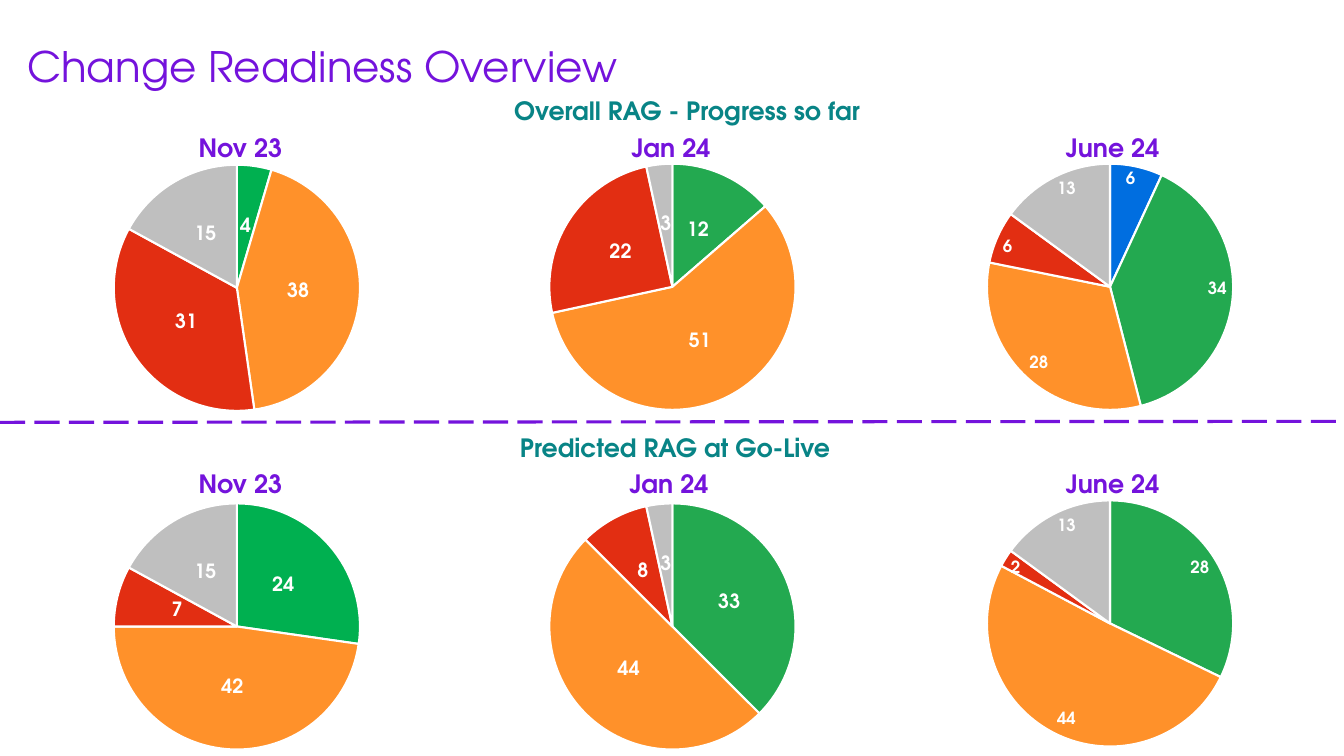
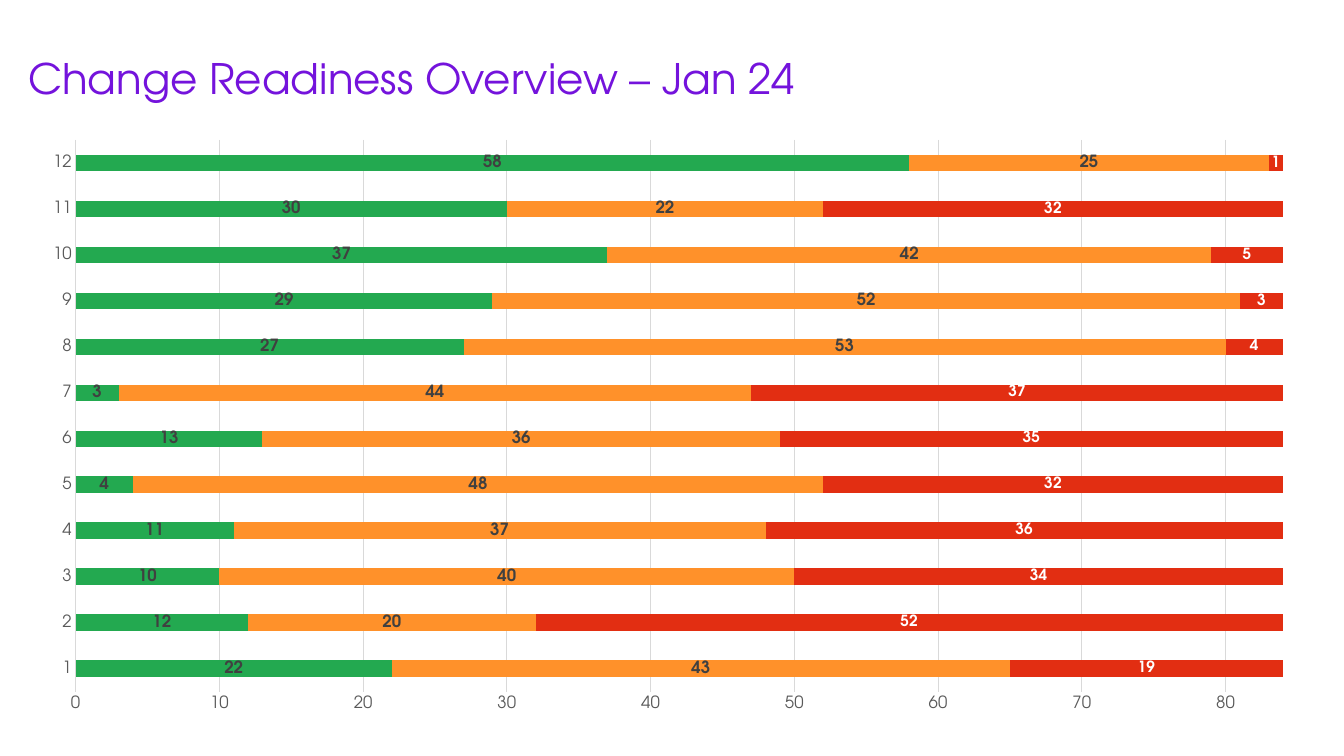
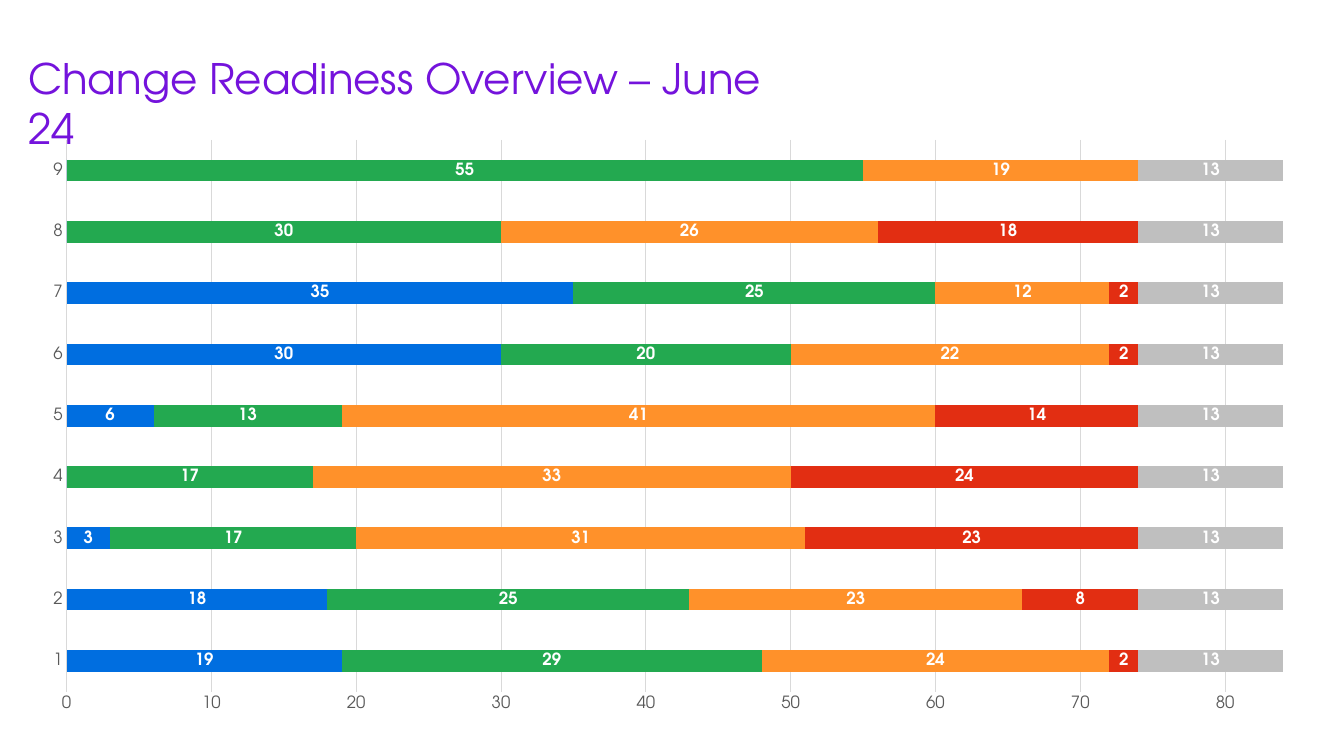
from lxml import etree
from pptx import Presentation
from pptx.chart.data import CategoryChartData as ChartData
from pptx.dml.color import RGBColor
from pptx.enum.chart import XL_CHART_TYPE as Kind
from pptx.enum.chart import XL_LABEL_POSITION as Pos
from pptx.enum.chart import XL_TICK_MARK as Tick
from pptx.enum.dml import MSO_LINE as Dash
from pptx.enum.shapes import MSO_CONNECTOR as Link
from pptx.enum.text import PP_ALIGN as Align
from pptx.oxml.ns import qn
from pptx.util import Inches, Pt

FONT = "TeX Gyre Adventor"
PURPLE = RGBColor(0x74, 0x13, 0xDC)
TEAL = RGBColor(0x08, 0x84, 0x86)
BLUE = RGBColor(0x00, 0x6E, 0xE0)
GREEN = RGBColor(0x23, 0xA9, 0x50)
BRIGHT = RGBColor(0x00, 0xB0, 0x50)
AMBER = RGBColor(0xFF, 0x91, 0x2A)
RED = RGBColor(0xE2, 0x2E, 0x12)
GREY = RGBColor(0xBF, 0xBF, 0xBF)
RULE = RGBColor(0xD9, 0xD9, 0xD9)
DIM = RGBColor(0x59, 0x59, 0x59)
DARK = RGBColor(0x40, 0x40, 0x40)
WHITE = RGBColor(0xFF, 0xFF, 0xFF)
BLACK = RGBColor(0, 0, 0)

RAG = [AMBER, RED, GREY]
NOV, JAN, JUNE = [BRIGHT] + RAG, [GREEN] + RAG, [BLUE, GREEN] + RAG

# Each pie: label, label centre, left, top, values, colours, label place, size
PIES = [
    ("Nov 23", 2.35, 0.38, 1.49, [4, 38, 31, 15], NOV, Pos.CENTER, 14),
    ("Jan 24", 6.62, 4.7, 1.48, [12, 51, 22, 3], JAN, Pos.CENTER, 14),
    ("June 24", 11, 9.04, 1.48, [6, 34, 28, 6, 13], JUNE, Pos.INSIDE_END, 12),
    ("Nov 23", 2.35, 0.38, 4.85, [24, 42, 7, 15], NOV, Pos.CENTER, 14),
    ("Jan 24", 6.6, 4.7, 4.85, [33, 44, 8, 3], JAN, Pos.CENTER, 14),
    ("June 24", 11, 9.04, 4.82, [0, 28, 44, 2, 13], [GREEN] + JAN,
     Pos.INSIDE_END, 12),
]

# Each bar series: values, fill, label colour, label size
JAN_BARS = [
    ([22, 12, 10, 11, 4, 13, 3, 27, 29, 37, 30, 58], GREEN, DARK, 12),
    ([43, 20, 40, 37, 48, 36, 44, 53, 52, 42, 22, 25], AMBER, DARK, 12),
    ([19, 52, 34, 36, 32, 35, 37, 4, 3, 5, 32, 1], RED, WHITE, 11),
]
JUNE_BARS = [
    ([19, 18, 3, 0, 6, 30, 35, 0, 0], BLUE, WHITE, 12),
    ([29, 25, 17, 17, 13, 20, 25, 30, 55], GREEN, WHITE, 12),
    ([24, 23, 31, 33, 41, 22, 12, 26, 19], AMBER, WHITE, 12),
    ([2, 8, 23, 24, 14, 2, 2, 18, 0], RED, WHITE, 12),
    ([13] * 9, GREY, WHITE, 12),
]


def style(font, size, color, bold=False):
    font.name, font.size, font.bold = FONT, Pt(size), bold
    font.color.rgb = color


def add_text(slide, text, left, top, width, height, size, color, bold=False):
    box = slide.shapes.add_textbox(
        Inches(left), Inches(top), Inches(width), Inches(height))
    frame = box.text_frame
    frame.word_wrap = True
    para = frame.paragraphs[0]
    run = para.add_run()
    run.text = text
    style(run.font, size, color, bold)
    return frame, para


def add_title(slide, text, left, top):
    frame, _ = add_text(slide, text, left, top, 7.8, 0.5, 30, PURPLE)
    frame.margin_left = frame.margin_right = 0
    frame.margin_top = frame.margin_bottom = 0


def add_head(slide, text, mid, top, width, color):
    _, para = add_text(slide, text, mid - width / 2, top, width, 0.4,
                       18, color, True)
    para.alignment = Align.CENTER
    para._p.get_or_add_pPr().set("marL", str(Inches(0.07)))


def set_plot(chart, **parts):
    """Fix the inner plot area, as shares of the chart."""
    area = chart.element.find(".//" + qn("c:plotArea"))
    for old in area.findall(qn("c:layout")):
        area.remove(old)
    layout = etree.Element(qn("c:layout"))
    area.insert(0, layout)
    manual = etree.SubElement(layout, qn("c:manualLayout"))
    values = dict(layoutTarget="inner", xMode="edge", yMode="edge", **parts)
    for key, value in values.items():
        etree.SubElement(manual, qn("c:" + key)).set("val", str(value))


def add_chart(slide, kind, rows, left, top, width, height):
    data = ChartData()
    data.categories = [str(n + 1) for n in range(len(rows[0]))]
    for num, row in enumerate(rows, 1):
        data.add_series(f"Series {num}", row)
    chart = slide.shapes.add_chart(
        kind, Inches(left), Inches(top), Inches(width), Inches(height),
        data).chart
    chart.has_title = chart.has_legend = False
    style(chart.font, 10, BLACK)
    return chart


def set_labels(series, place, size, color):
    labels = series.data_labels
    labels.show_value = True
    labels.position = place
    labels.number_format = "#"  # leaves zeros blank
    labels.number_format_is_linked = False
    style(labels.font, size, color, True)


def add_pie(slide, left, top, values, colors, place, size):
    chart = add_chart(slide, Kind.PIE, [values], left, top, 3.94, 2.76)
    set_plot(chart, x=0.19, y=0.05, w=0.62, h=0.89)
    series = chart.plots[0].series[0]
    for num, color in enumerate(colors):
        form = series.points[num].format
        form.fill.solid()
        form.fill.fore_color.rgb = color
        form.line.color.rgb = WHITE
        form.line.width = Pt(1.5)
    set_labels(series, place, size, WHITE)


def set_line(line, color):
    line.color.rgb = color
    line.width = Pt(0.75)


def add_bars(slide, bars, start):
    chart = add_chart(slide, Kind.BAR_STACKED, [bar[0] for bar in bars],
                      0.28, 1.27, 12.7, 5.93)
    set_plot(chart, x=start, y=0.02, w=round(0.98 - start, 3), h=0.923)
    plot = chart.plots[0]
    plot.gap_width, plot.overlap = 182, 100
    plot.vary_by_categories = False
    for series, (_, fill, color, size) in zip(plot.series, bars):
        series.invert_if_negative = False
        series.format.fill.solid()
        series.format.fill.fore_color.rgb = fill
        set_labels(series, Pos.CENTER, size, color)
    # Axes
    cat, val = chart.category_axis, chart.value_axis
    for axis in (cat, val):
        axis.major_tick_mark = axis.minor_tick_mark = Tick.NONE
        style(axis.tick_labels.font, 12, DIM)
    set_line(cat.format.line, RULE)
    val.format.line.fill.background()
    val.minimum_scale, val.maximum_scale, val.major_unit = 0, 84, 10
    val.has_major_gridlines = True
    set_line(val.major_gridlines.format.line, RULE)


def add_rule(slide):
    rule = slide.shapes.add_connector(
        Link.STRAIGHT, 0, Inches(4.19), Inches(13.33), Inches(4.18))
    rule.line.color.rgb = PURPLE
    rule.line.width = Pt(2.25)
    rule.line.dash_style = Dash.LONG_DASH
    etree.SubElement(rule._element.spPr, qn("a:effectLst"))


def main():
    deck = Presentation()
    deck.slide_width, deck.slide_height = Inches(13.33), Inches(7.5)
    blank = deck.slide_layouts[6]

    # Pies: progress above, forecast below
    slide = deck.slides.add_slide(blank)
    add_head(slide, "Predicted RAG at Go-Live", 6.66, 4.24, 3.55, TEAL)
    add_head(slide, "Overall RAG - Progress so far", 6.78, 0.9, 4.16, TEAL)
    add_rule(slide)
    add_title(slide, "Change Readiness Overview", 0.27, 0.4)
    for num, (label, mid, *pie) in enumerate(PIES):
        add_pie(slide, *pie)
        add_head(slide, label, mid, 1.26 if num < 3 else 4.6, 1.3, PURPLE)

    # Stacked bars, one slide a month
    for month, bars, start in (("Jan 24", JAN_BARS, 0.037),
                               ("June 24", JUNE_BARS, 0.03)):
        slide = deck.slides.add_slide(blank)
        add_title(slide, f"Change Readiness Overview – {month}", 0.28, 0.52)
        add_bars(slide, bars, start)

    deck.save("out.pptx")


if __name__ == "__main__":
    main()
